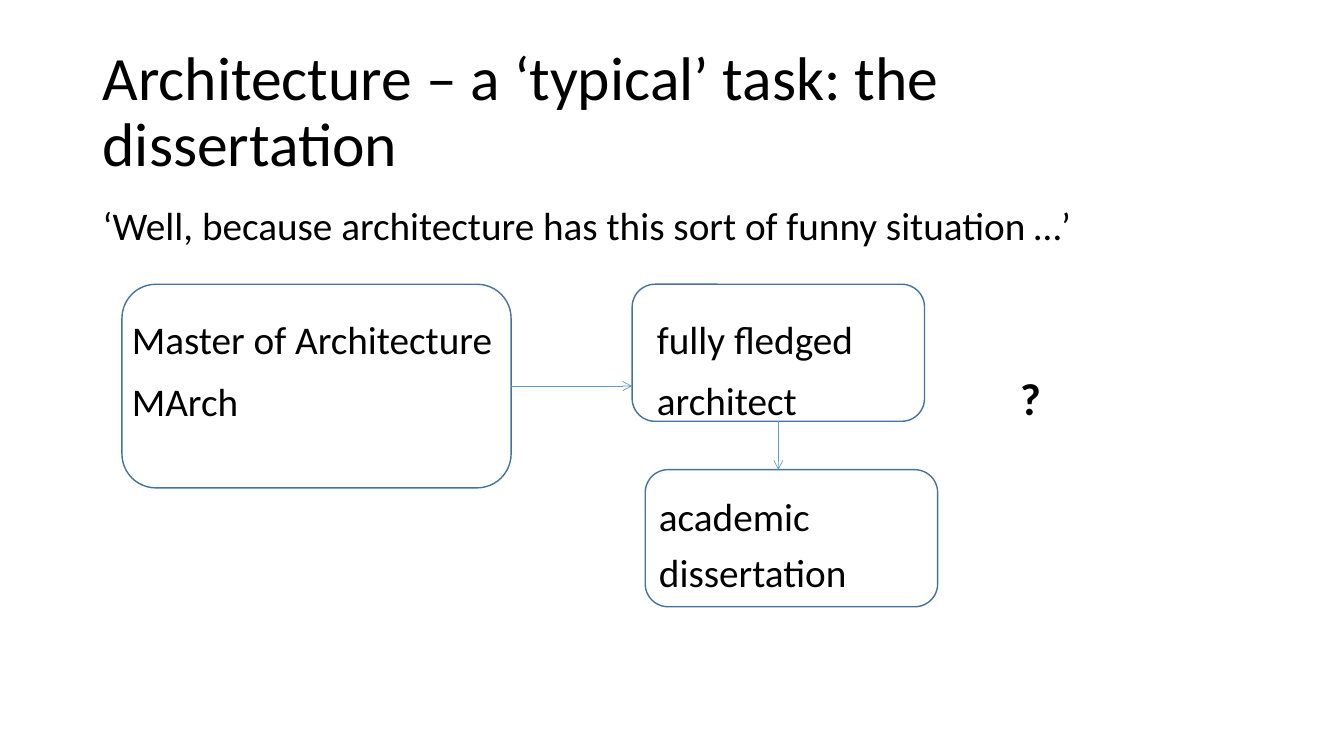
from lxml import etree
from pptx import Presentation
from pptx import util as u
from pptx.dml.color import RGBColor
from pptx.enum import shapes, text
from pptx.oxml.ns import qn

BLACK = RGBColor(0x00, 0x00, 0x00)
OUTLINE = RGBColor(0x43, 0x73, 0x9E)
ARROW = RGBColor(0x5B, 0x9B, 0xD5)


class TaskPage:
    """Draws the slide's text, stage boxes and arrows in one style."""

    font = "Calibri"

    def __init__(self, deck):
        self.page = deck.slides.add_slide(deck.slide_layouts[6])

    def set_lines(self, frame, lines, size=28, bold=False, gap=10):
        frame.word_wrap = True
        for number, line in enumerate(lines):
            para = frame.add_paragraph() if number else frame.paragraphs[0]
            para.text = line
            para.alignment = text.PP_ALIGN.LEFT
            para.line_spacing = 0.9
            para.space_before = u.Pt(gap if number else 0)
            para.font.name = self.font
            para.font.size = u.Pt(size)
            para.font.bold = bold
            para.font.color.rgb = BLACK

    def label(self, left, top, width, height, line, size=28, bold=False,
              anchor=text.MSO_ANCHOR.TOP):
        box = self.page.shapes.add_textbox(*map(u.Inches, (left, top, width, height)))
        box.text_frame.vertical_anchor = anchor
        self.set_lines(box.text_frame, [line], size, bold)

    def stage(self, left, top, width, height, lines, inset, gap=10):
        box = self.page.shapes.add_shape(
            shapes.MSO_SHAPE.ROUNDED_RECTANGLE,
            *map(u.Inches, (left, top, width, height)))
        box.shadow.inherit = False
        box.fill.background()
        box.line.color.rgb = OUTLINE
        box.line.width = u.Pt(1)
        frame = box.text_frame
        frame.vertical_anchor = text.MSO_ANCHOR.TOP
        frame.margin_left, frame.margin_top = map(u.Inches, inset)
        frame.margin_right = frame.margin_bottom = 0
        self.set_lines(frame, lines, gap=gap)
        return box

    def arrow(self, box, side, start, end):
        line = self.page.shapes.add_connector(
            shapes.MSO_CONNECTOR.STRAIGHT, *map(u.Inches, start + end))
        line.begin_connect(box, side)
        line.line.color.rgb = ARROW
        line.line.width = u.Pt(0.5)
        properties = line._element.spPr
        etree.SubElement(properties.find(qn("a:ln")), qn("a:tailEnd"), type="arrow")
        etree.SubElement(properties, qn("a:effectLst"))


def main():
    deck = Presentation()
    deck.slide_width, deck.slide_height = u.Inches(13.33), u.Inches(7.5)
    page = TaskPage(deck)

    page.label(0.92, 0.4, 11.5, 1.45,
               "Architecture – a ‘typical’ task: the dissertation",
               size=44, anchor=text.MSO_ANCHOR.MIDDLE)
    page.label(0.92, 2, 11.5, 0.6,
               "‘Well, because architecture has this sort of funny situation …’")
    page.label(10.02, 3.69, 0.6, 0.6, "?", size=32, bold=True)

    master = page.stage(1.21, 2.82, 3.86, 2.02,
                        ["Master of Architecture", "MArch"], (0, 0.26), gap=14)
    architect = page.stage(6.27, 2.82, 2.9, 1.36,
                           ["fully fledged", "architect"], (0.18, 0.29), gap=14)
    page.stage(6.4, 4.66, 2.9, 1.36,
               ["academic", "dissertation"], (0.07, 0.21))

    page.arrow(master, 3, (5.07, 3.83), (6.27, 3.83))
    page.arrow(architect, 2, (7.72, 4.18), (7.72, 4.66))
    deck.save("out.pptx")


if __name__ == "__main__":
    main()
